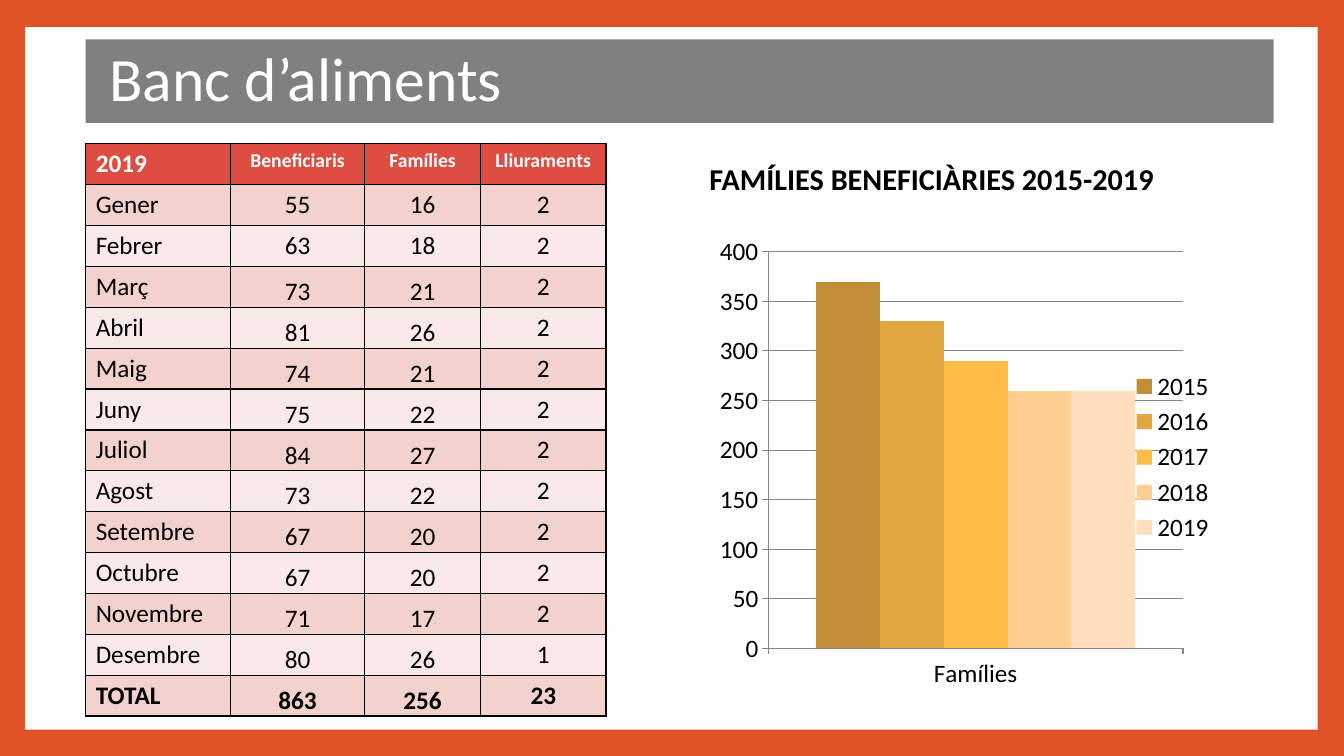
from lxml.etree import SubElement
from pptx import Presentation
from pptx.chart.data import CategoryChartData
from pptx.dml.color import RGBColor
from pptx.enum.chart import XL_CHART_TYPE as CT, XL_LEGEND_POSITION as LP, XL_TICK_MARK as TM
from pptx.enum.shapes import MSO_SHAPE as SH
from pptx.enum.text import MSO_ANCHOR as MA, PP_ALIGN as AL
from pptx.oxml.ns import qn
from pptx.util import Pt

FONT = "Calibri"
HEADERS = ["2019", "Beneficiaris", "Famílies", "Lliuraments"]
MONTHS = [
    ("Gener", 55, 16, 2),
    ("Febrer", 63, 18, 2),
    ("Març", 73, 21, 2),
    ("Abril", 81, 26, 2),
    ("Maig", 74, 21, 2),
    ("Juny", 75, 22, 2),
    ("Juliol", 84, 27, 2),
    ("Agost", 73, 22, 2),
    ("Setembre", 67, 20, 2),
    ("Octubre", 67, 20, 2),
    ("Novembre", 71, 17, 2),
    ("Desembre", 80, 26, 1),
    ("TOTAL", 863, 256, 23),
]
COLUMN_WIDTHS = [103.5, 95.8, 82.8, 89.6]
ROW_HEIGHT = 29.2
FAMILIES = [
    ("2015", 370, "C18E36"),
    ("2016", 330, "E2A740"),
    ("2017", 290, "FFBD47"),
    ("2018", 260, "FFCF91"),
    ("2019", 260, "FFDFBC"),
]
PLOT_LAYOUT = {"x": 0.13, "y": 0.05, "w": 0.79, "h": 0.87}


def rgb(color):
    """Turn a hex string into a colour."""
    return RGBColor.from_string(color)


def add_run(p, text, size, color="000000", bold=False):
    """Add one formatted run to a paragraph."""
    r = p.add_run()
    r.text = text
    r.font.name = FONT
    r.font.size = Pt(size)
    r.font.bold = bold
    r.font.color.rgb = rgb(color)


def add_rect(s, x, y, w, h, color):
    """Add a plain filled rectangle."""
    sp = s.shapes.add_shape(SH.RECTANGLE, Pt(x), Pt(y), Pt(w), Pt(h))
    sp.shadow.inherit = False
    sp.fill.solid()
    sp.fill.fore_color.rgb = rgb(color)
    sp.line.fill.background()
    return sp


def add_title(s, text):
    """Add the grey title band."""
    sp = add_rect(s, 61.2, 28.1, 848.6, 59.8, "808080")
    tf = sp.text_frame
    tf.word_wrap = True
    tf.vertical_anchor = MA.MIDDLE
    tf.margin_left = Pt(17)
    p = tf.paragraphs[0]
    p.alignment = AL.LEFT
    p.line_spacing = 0.9
    add_run(p, text, 44, "FFFFFF")


def add_heading(s, text):
    """Add the heading above the chart."""
    sp = s.shapes.add_textbox(Pt(499.7), Pt(110.9), Pt(365), Pt(33.1))
    tf = sp.text_frame
    tf.word_wrap = True
    add_run(tf.paragraphs[0], text, 21.6, bold=True)


def fill_cell(cell, color):
    """Give a cell its fill and thin black borders."""
    pr = cell._tc.get_or_add_tcPr()
    for side in ("lnL", "lnR", "lnT", "lnB"):
        ln = SubElement(pr, qn(f"a:{side}"), w=str(Pt(1)))
        SubElement(SubElement(ln, qn("a:solidFill")), qn("a:srgbClr"), val="000000")
    cell.fill.solid()
    cell.fill.fore_color.rgb = rgb(color)


def lower_text(cell):
    """Set the text at the foot of a cell with narrow margins."""
    cell.vertical_anchor = MA.BOTTOM
    cell.margin_left = cell.margin_right = cell.margin_top = Pt(0.7)
    cell.margin_bottom = Pt(0)


def add_month_table(s):
    """Add the table of monthly figures."""
    rows = [HEADERS, *MONTHS]
    frame = s.shapes.add_table(len(rows), len(HEADERS), Pt(61.2), Pt(102.7),
                               Pt(sum(COLUMN_WIDTHS)), Pt(ROW_HEIGHT * len(rows)))
    table = frame.table
    for column, width in zip(table.columns, COLUMN_WIDTHS):
        column.width = Pt(width)
    for i, values in enumerate(rows):
        table.rows[i].height = Pt(ROW_HEIGHT)
        header = i == 0
        band = "DE4D42" if header else ("F9E9E8", "F3D1CD")[i % 2]
        for j, value in enumerate(values):
            cell = table.cell(i, j)
            fill_cell(cell, band)
            if i > 2 and j in (1, 2):
                lower_text(cell)
            p = cell.text_frame.paragraphs[0]
            p.alignment = AL.CENTER if j else AL.LEFT
            add_run(p, str(value), 14 if header and j else 18,
                    "FFFFFF" if header else "000000", header or i == len(MONTHS))


def set_plot_layout(chart):
    """Fix the inner plot area within the chart."""
    area = chart._chartSpace.find(".//" + qn("c:plotArea"))
    for old in area.findall(qn("c:layout")):
        area.remove(old)
    layout = SubElement(area, qn("c:layout"))
    area.insert(0, layout)
    manual = SubElement(layout, qn("c:manualLayout"))
    SubElement(manual, qn("c:layoutTarget"), val="inner")
    for key in ("x", "y"):
        SubElement(manual, qn(f"c:{key}Mode"), val="edge")
    for key, value in PLOT_LAYOUT.items():
        SubElement(manual, qn(f"c:{key}"), val=str(value))


def add_family_chart(s):
    """Add the column chart of families per year."""
    data = CategoryChartData()
    data.categories = ["Famílies"]
    for year, count, _ in FAMILIES:
        data.add_series(year, [count])
    chart = s.shapes.add_chart(CT.COLUMN_CLUSTERED, Pt(500), Pt(163.6),
                               Pt(375.1), Pt(328.3), data).chart
    chart.has_title = False
    chart.font.name = FONT
    chart.font.size = Pt(18)
    chart.font.color.rgb = rgb("000000")
    chart.has_legend = True
    chart.legend.position = LP.RIGHT
    chart.legend.include_in_layout = False
    plot = chart.plots[0]
    plot.gap_width = 150
    plot.overlap = 0
    plot.vary_by_categories = False
    for series, (_, _, color) in zip(plot.series, FAMILIES):
        series.format.fill.solid()
        series.format.fill.fore_color.rgb = rgb(color)
    values = chart.value_axis
    values.minimum_scale, values.maximum_scale, values.major_unit = 0, 400, 50
    values.has_major_gridlines = True
    for axis in (chart.category_axis, values):
        axis.major_tick_mark = TM.OUTSIDE
        axis.format.line.color.rgb = rgb("868686")
    values.major_gridlines.format.line.color.rgb = rgb("868686")
    set_plot_layout(chart)


def main():
    """Build the slide and save it."""
    prs = Presentation()
    prs.slide_width, prs.slide_height = Pt(960), Pt(540)
    s = prs.slides.add_slide(prs.slide_layouts[6])
    s.background.fill.solid()
    s.background.fill.fore_color.rgb = rgb("DF5327")
    add_rect(s, 18, 19.4, 923.2, 501.8, "FFFFFF")
    add_title(s, "Banc d’aliments")
    add_month_table(s)
    add_heading(s, "FAMÍLIES BENEFICIÀRIES 2015-2019")
    add_family_chart(s)
    prs.save("out.pptx")


if __name__ == "__main__":
    main()
